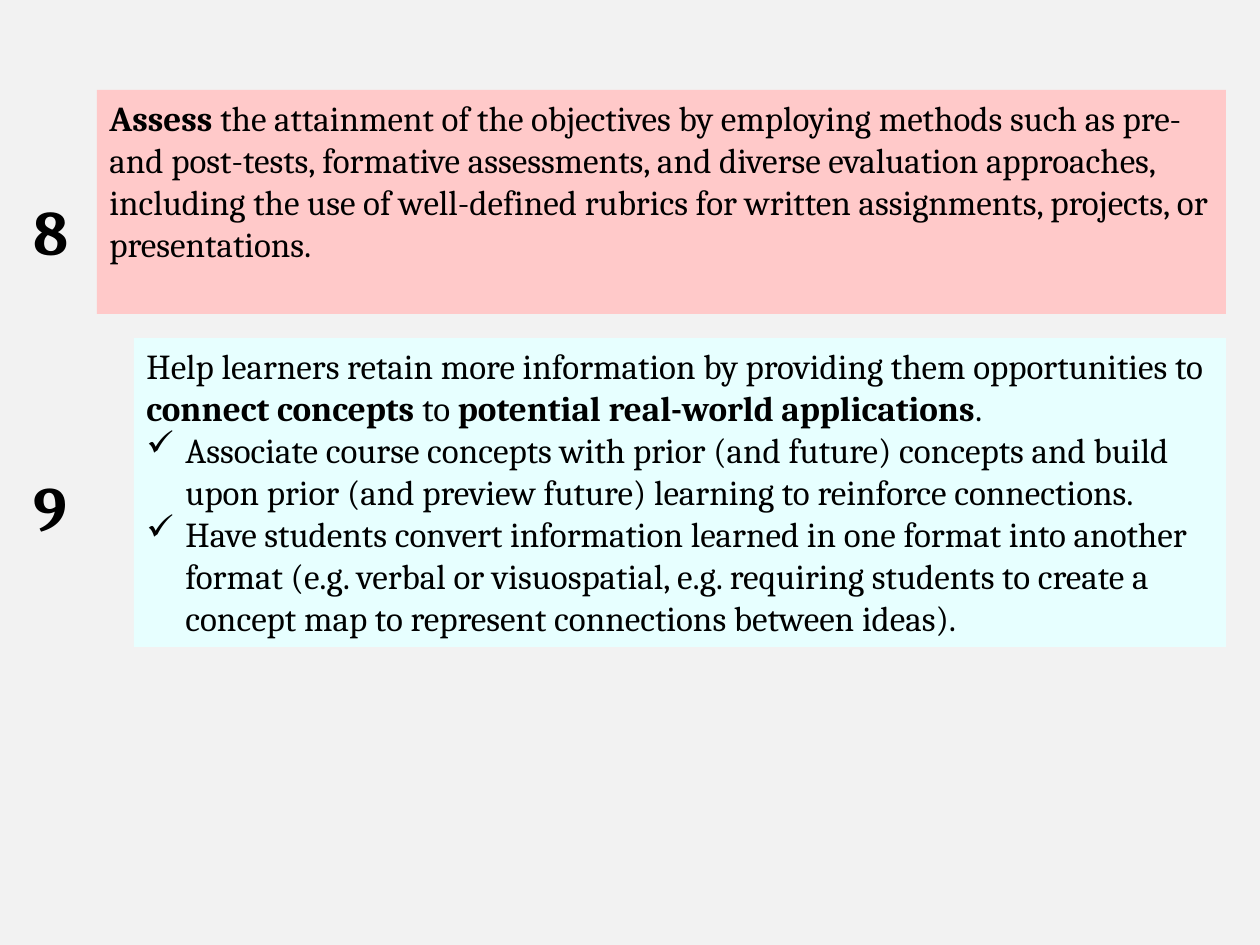
from dataclasses import dataclass

from lxml.etree import SubElement
from pptx import Presentation
from pptx.dml.color import RGBColor
from pptx.enum.shapes import MSO_SHAPE as Shape
from pptx.enum.text import MSO_ANCHOR as Anchor, PP_ALIGN as Align
from pptx.oxml.ns import qn
from pptx.util import Pt

EMU_PER_PX = 914400 / 126
FONT = "Cambria"
COLORS = {"background": "F2F2F2", "pink": "FFC9C9", "cyan": "E7FFFF", "text": "000000"}
RIGHT_EDGE = 1226
BULLET_INDENT = 39


@dataclass(frozen=True)
class Segment:
    text: str
    bold: bool = False


@dataclass(frozen=True)
class Line:
    segments: tuple[Segment, ...]
    bullet: str = ""


@dataclass(frozen=True)
class Tip:
    number: str
    number_top: int
    left: int
    top: int
    height: int
    fill: str
    lines: tuple[Line, ...]


TIPS = (
    Tip("8", 186, 97, 90, 224, "pink", (
        Line((
            Segment("Assess", True),
            Segment(" the attainment of the objectives by employing methods such as pre- "
                    "and post-tests, formative assessments, and diverse evaluation "
                    "approaches, including the use of well-defined rubrics for written "
                    "assignments, projects, or presentations."),
        )),
    )),
    Tip("9", 462, 134, 338, 309, "cyan", (
        Line((
            Segment("Help learners retain more information by providing them "
                    "opportunities to "),
            Segment("connect concepts ", True),
            Segment("to "),
            Segment("potential real-world applications", True),
            Segment("."),
        )),
        Line((Segment("Associate course concepts with prior (and future) concepts and "
                      "build upon prior (and preview future) learning to reinforce "
                      "connections."),), "✓"),
        Line((Segment("Have students convert information learned in one format into "
                      "another format (e.g. verbal or visuospatial, e.g. requiring "
                      "students to create a concept map to represent connections "
                      "between ideas)."),), "✓"),
    )),
)


def px(length: int) -> int:
    return round(length * EMU_PER_PX)


def color(name: str) -> RGBColor:
    return RGBColor.from_string(COLORS[name])


def format_run(run, size: int, bold: bool) -> None:
    run.font.name = FONT
    run.font.size = Pt(size)
    run.font.bold = bold
    run.font.color.rgb = color("text")


def add_bullet(paragraph, character: str) -> None:
    properties = paragraph._p.get_or_add_pPr()
    properties.set("marL", str(px(BULLET_INDENT)))
    properties.set("indent", str(-px(BULLET_INDENT)))
    SubElement(properties, qn("a:buChar")).set("char", character)


def write_line(paragraph, line: Line) -> None:
    paragraph.alignment = Align.LEFT
    if line.bullet:
        add_bullet(paragraph, line.bullet)
    for segment in line.segments:
        run = paragraph.add_run()
        run.text = segment.text
        format_run(run, 20, segment.bold)


def add_panel(slide, tip: Tip) -> None:
    shape = slide.shapes.add_shape(
        Shape.RECTANGLE, px(tip.left), px(tip.top),
        px(RIGHT_EDGE - tip.left), px(tip.height))
    shape.shadow.inherit = False
    shape.fill.solid()
    shape.fill.fore_color.rgb = color(tip.fill)
    shape.line.fill.background()
    text_frame = shape.text_frame
    text_frame.word_wrap = True
    text_frame.vertical_anchor = Anchor.TOP
    for index, line in enumerate(tip.lines):
        paragraph = text_frame.add_paragraph() if index else text_frame.paragraphs[0]
        write_line(paragraph, line)


def add_number(slide, tip: Tip) -> None:
    shape = slide.shapes.add_textbox(px(21), px(tip.number_top), px(92), px(89))
    text_frame = shape.text_frame
    text_frame.word_wrap = True
    text_frame.text = tip.number
    format_run(text_frame.paragraphs[0].runs[0], 36, True)


def main() -> None:
    presentation = Presentation()
    presentation.slide_width = px(1260)
    presentation.slide_height = px(945)
    slide = presentation.slides.add_slide(presentation.slide_layouts[6])
    slide.background.fill.solid()
    slide.background.fill.fore_color.rgb = color("background")

    # Numbered teaching tips
    for tip in TIPS:
        add_panel(slide, tip)
        add_number(slide, tip)

    presentation.save("out.pptx")


if __name__ == "__main__":
    main()
